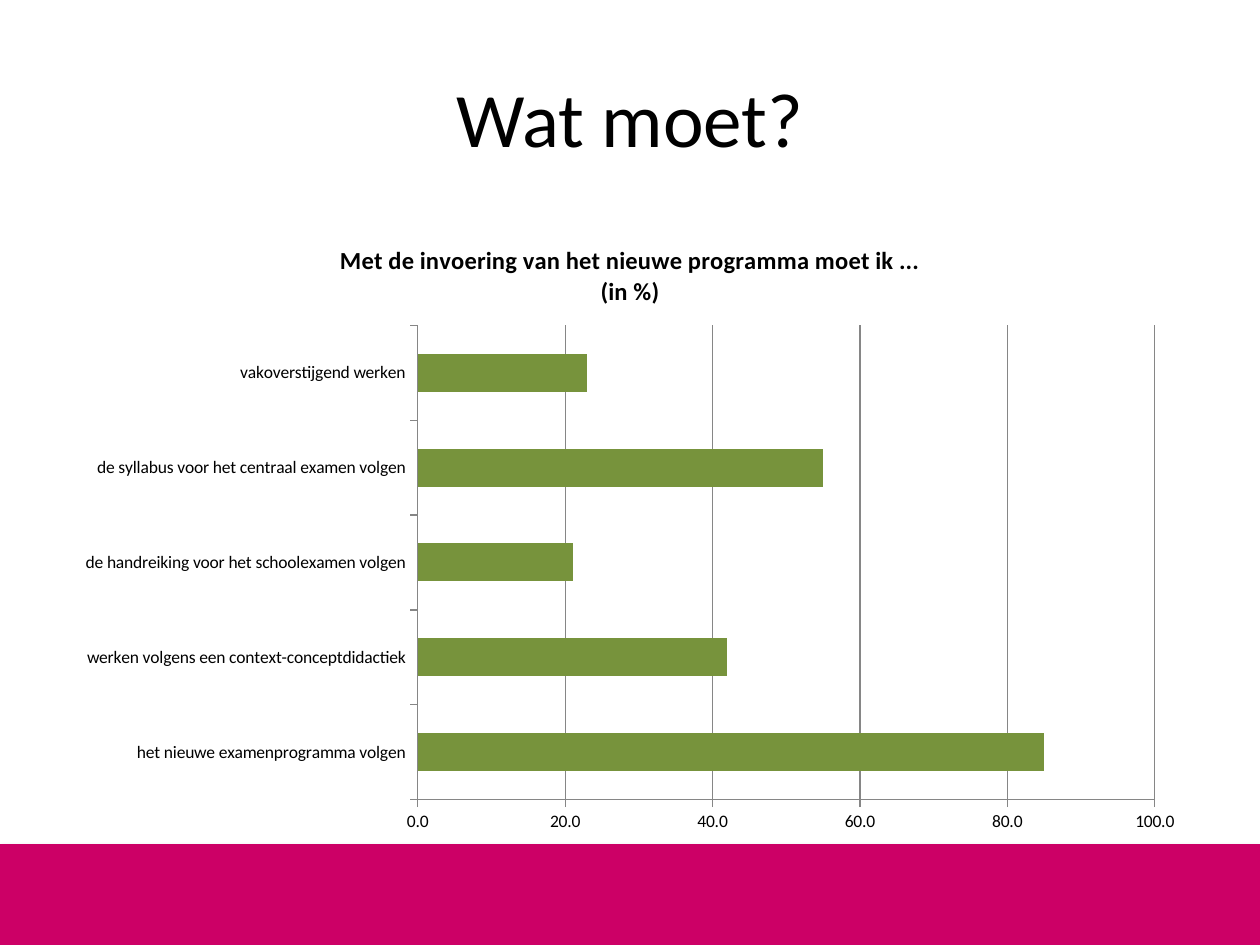
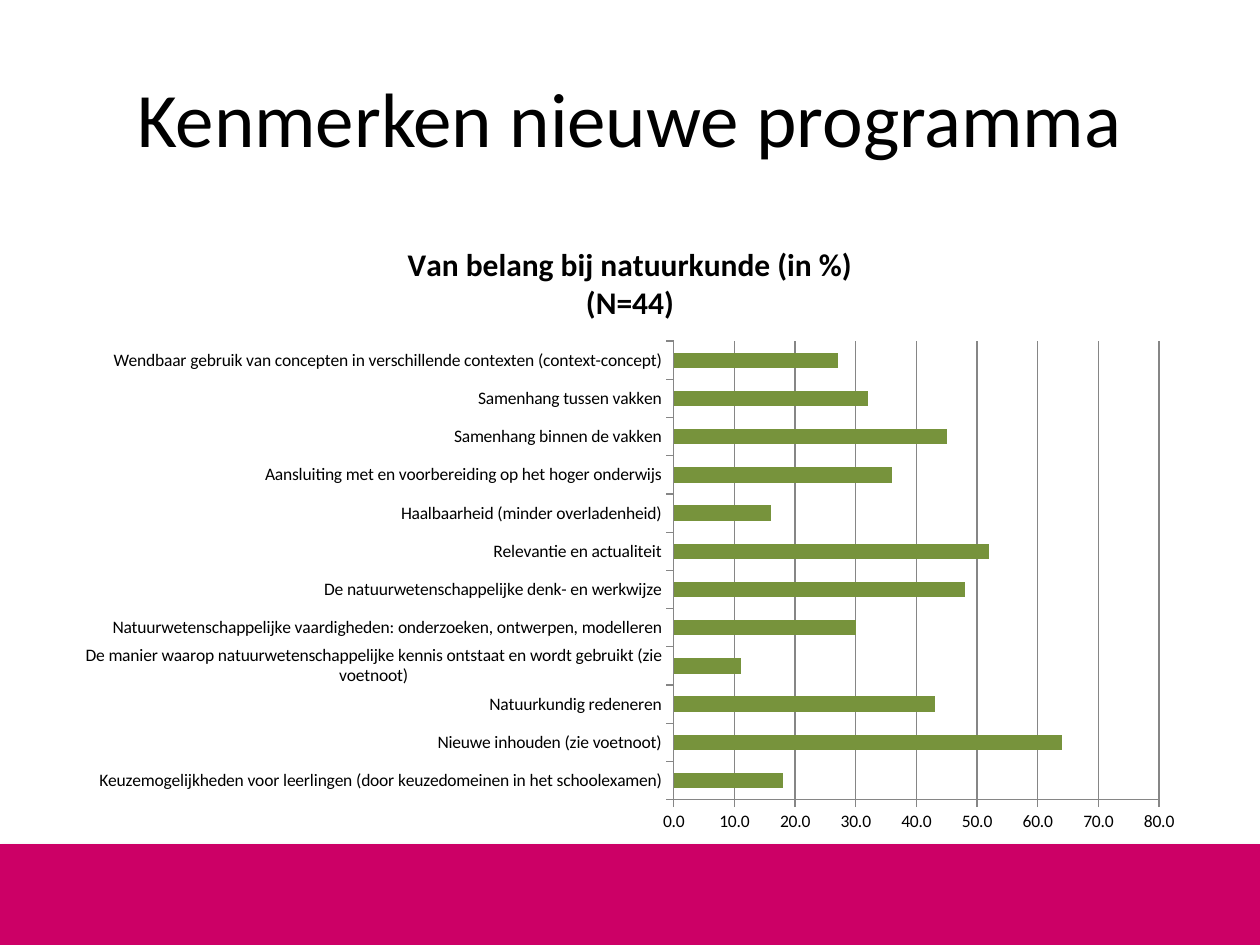
from dataclasses import dataclass

from lxml.etree import SubElement
from pptx import Presentation
from pptx.chart.data import CategoryChartData
from pptx.dml.color import RGBColor
from pptx.enum.chart import XL_CHART_TYPE, XL_TICK_MARK
from pptx.enum.shapes import MSO_SHAPE
from pptx.enum.text import MSO_ANCHOR, PP_ALIGN
from pptx.oxml.ns import qn
from pptx.presentation import Presentation as Deck
from pptx.slide import Slide
from pptx.util import Cm, Pt

BLACK = RGBColor(0x00, 0x00, 0x00)
MAGENTA = RGBColor(0xCC, 0x00, 0x66)
GREEN = RGBColor(0x77, 0x93, 0x3C)
GREY = RGBColor(0x86, 0x86, 0x86)
FONT = "Calibri"

SLIDE_WIDTH, SLIDE_HEIGHT = Cm(25.4), Cm(19.05)
MARGIN = Cm(1.27)
CONTENT_WIDTH = SLIDE_WIDTH - 2 * MARGIN
TITLE_TOP, TITLE_HEIGHT = Cm(0.76), Cm(3.18)
CHART_TOP = Cm(4.45)
BAND_TOP = Cm(17.02)


@dataclass(frozen=True)
class SurveySlide:
    title: str
    chart_heading: tuple[str, ...]
    heading_size: int
    axis_maximum: int
    axis_step: int
    number_format: str
    percentages: dict[str, int]  # from the bottom bar up


SURVEY_SLIDES = (
    SurveySlide(
        title="Wat moet?",
        chart_heading=("Met de invoering van het nieuwe programma moet ik ...", "(in %)"),
        heading_size=14,
        axis_maximum=100,
        axis_step=20,
        number_format="###0.0",
        percentages={
            "het nieuwe examenprogramma volgen": 85,
            "werken volgens een context-conceptdidactiek": 42,
            "de handreiking voor het schoolexamen volgen": 21,
            "de syllabus voor het centraal examen volgen": 55,
            "vakoverstijgend werken": 23,
        },
    ),
    SurveySlide(
        title="Kenmerken nieuwe programma",
        chart_heading=("Van belang bij natuurkunde (in %)", "(N=44)"),
        heading_size=18,
        axis_maximum=80,
        axis_step=10,
        number_format="0.0",
        percentages={
            "Keuzemogelijkheden voor leerlingen (door keuzedomeinen in het schoolexamen)": 18,
            "Nieuwe inhouden (zie voetnoot)": 64,
            "Natuurkundig redeneren": 43,
            "De manier waarop natuurwetenschappelijke kennis ontstaat en wordt gebruikt (zie voetnoot)": 11,
            "Natuurwetenschappelijke vaardigheden: onderzoeken, ontwerpen, modelleren": 30,
            "De natuurwetenschappelijke denk- en werkwijze": 48,
            "Relevantie en actualiteit": 52,
            "Haalbaarheid (minder overladenheid)": 16,
            "Aansluiting met en voorbereiding op het hoger onderwijs": 36,
            "Samenhang binnen de vakken": 45,
            "Samenhang tussen vakken": 32,
            "Wendbaar gebruik van concepten in verschillende contexten (context-concept)": 27,
        },
    ),
)


def move_band_to_master(deck: Deck, slide: Slide) -> None:
    """Draw the footer band on a slide, then move it behind everything on the master."""
    band = slide.shapes.add_shape(
        MSO_SHAPE.RECTANGLE, 0, BAND_TOP, SLIDE_WIDTH, SLIDE_HEIGHT - BAND_TOP
    )
    band.fill.solid()
    band.fill.fore_color.rgb = MAGENTA
    band.line.fill.background()
    band.shadow.inherit = False
    effects = band.element.spPr.find(qn("a:effectLst"))
    shadow = SubElement(
        effects, qn("a:outerShdw"), blurRad=str(Pt(3.1)), dist=str(Pt(1.8)),
        dir="5400000", rotWithShape="0",
    )
    shadow_color = SubElement(shadow, qn("a:srgbClr"), val=str(BLACK))
    SubElement(shadow_color, qn("a:alpha"), val="35000")
    deck.slide_master.shapes.element.insert(2, band.element)


def set_title(slide: Slide, wording: str) -> None:
    title = slide.shapes.title
    title.left, title.top = MARGIN, TITLE_TOP
    title.width, title.height = CONTENT_WIDTH, TITLE_HEIGHT
    title.text_frame.text = wording
    title.text_frame.vertical_anchor = MSO_ANCHOR.MIDDLE
    paragraph = title.text_frame.paragraphs[0]
    paragraph.alignment = PP_ALIGN.CENTER
    font = paragraph.runs[0].font
    font.name, font.size = FONT, Pt(44)
    font.color.rgb = BLACK


def add_bar_chart(slide: Slide, survey: SurveySlide) -> None:
    answers = CategoryChartData()
    answers.categories = list(survey.percentages)
    answers.add_series("Series 1", list(survey.percentages.values()))
    chart = slide.shapes.add_chart(
        XL_CHART_TYPE.BAR_STACKED, MARGIN, CHART_TOP,
        CONTENT_WIDTH, BAND_TOP - CHART_TOP, answers,
    ).chart
    chart.has_legend = False
    chart.font.name, chart.font.size = FONT, Pt(10)
    chart.font.color.rgb = BLACK

    heading = chart.chart_title.text_frame
    heading.text = "\n".join(survey.chart_heading)
    chart.chart_title.include_in_layout = False
    for paragraph in heading.paragraphs:
        font = paragraph.runs[0].font
        font.name, font.size, font.bold = FONT, Pt(survey.heading_size), True
        font.color.rgb = BLACK

    bars = chart.plots[0]
    bars.gap_width, bars.overlap = 150, 100
    bars.vary_by_categories = False
    bars.series[0].format.fill.solid()
    bars.series[0].format.fill.fore_color.rgb = GREEN

    percent_axis = chart.value_axis
    percent_axis.minimum_scale = 0
    percent_axis.maximum_scale = survey.axis_maximum
    percent_axis.major_unit = survey.axis_step
    percent_axis.has_major_gridlines = True
    percent_axis.tick_labels.number_format = survey.number_format
    percent_axis.tick_labels.number_format_is_linked = False
    chart.category_axis.has_major_gridlines = False
    for axis in (percent_axis, chart.category_axis):
        axis.major_tick_mark = XL_TICK_MARK.OUTSIDE
        axis.minor_tick_mark = XL_TICK_MARK.NONE
    for line in (
        percent_axis.format.line,
        percent_axis.major_gridlines.format.line,
        chart.category_axis.format.line,
    ):
        line.color.rgb = GREY
        line.width = Pt(0.75)


def main() -> None:
    deck = Presentation()
    deck.slide_width, deck.slide_height = SLIDE_WIDTH, SLIDE_HEIGHT
    title_only = deck.slide_layouts.get_by_name("Title Only")
    for survey in SURVEY_SLIDES:
        slide = deck.slides.add_slide(title_only)
        set_title(slide, survey.title)
        add_bar_chart(slide, survey)
    move_band_to_master(deck, deck.slides[0])
    deck.save("out.pptx")


if __name__ == "__main__":
    main()
